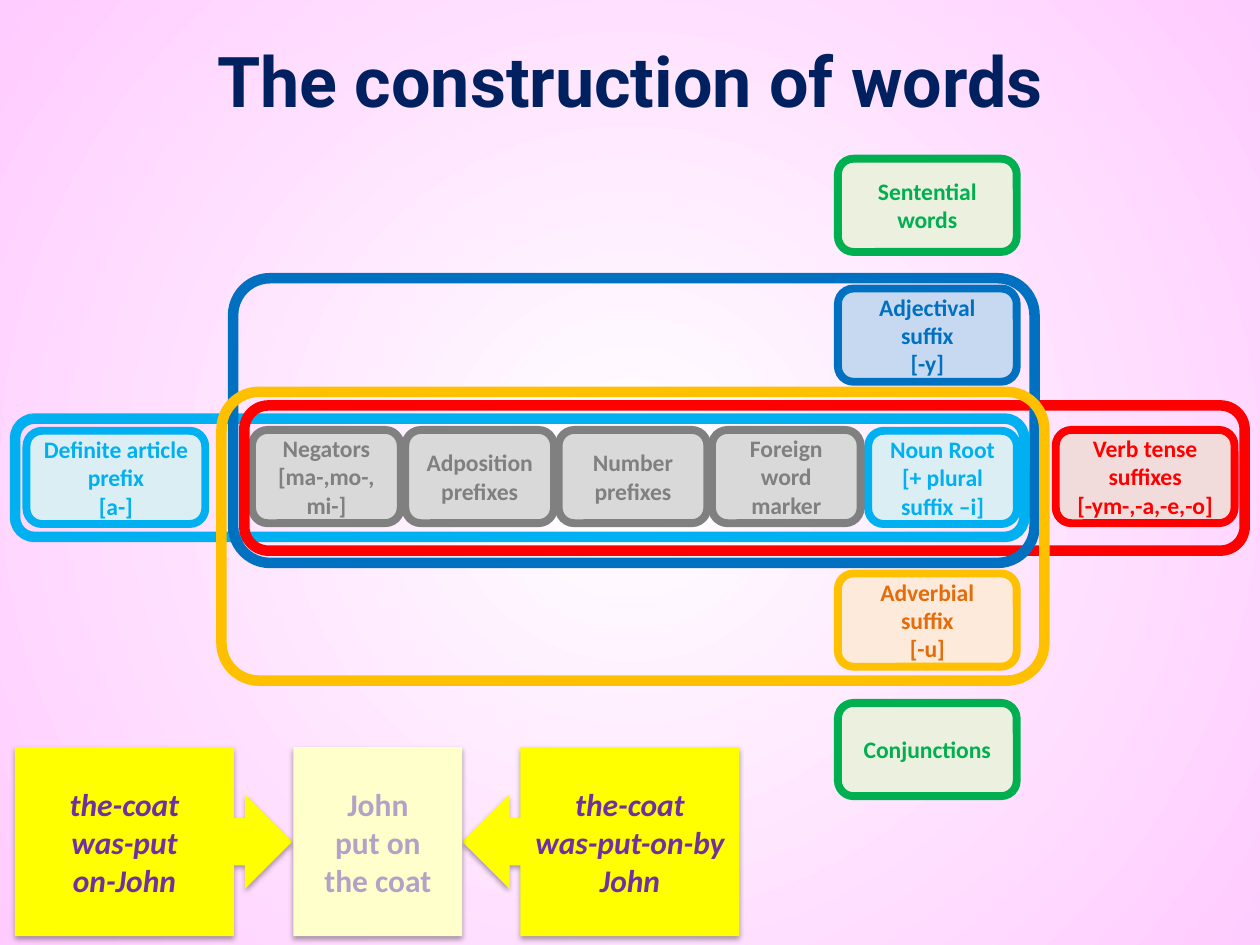
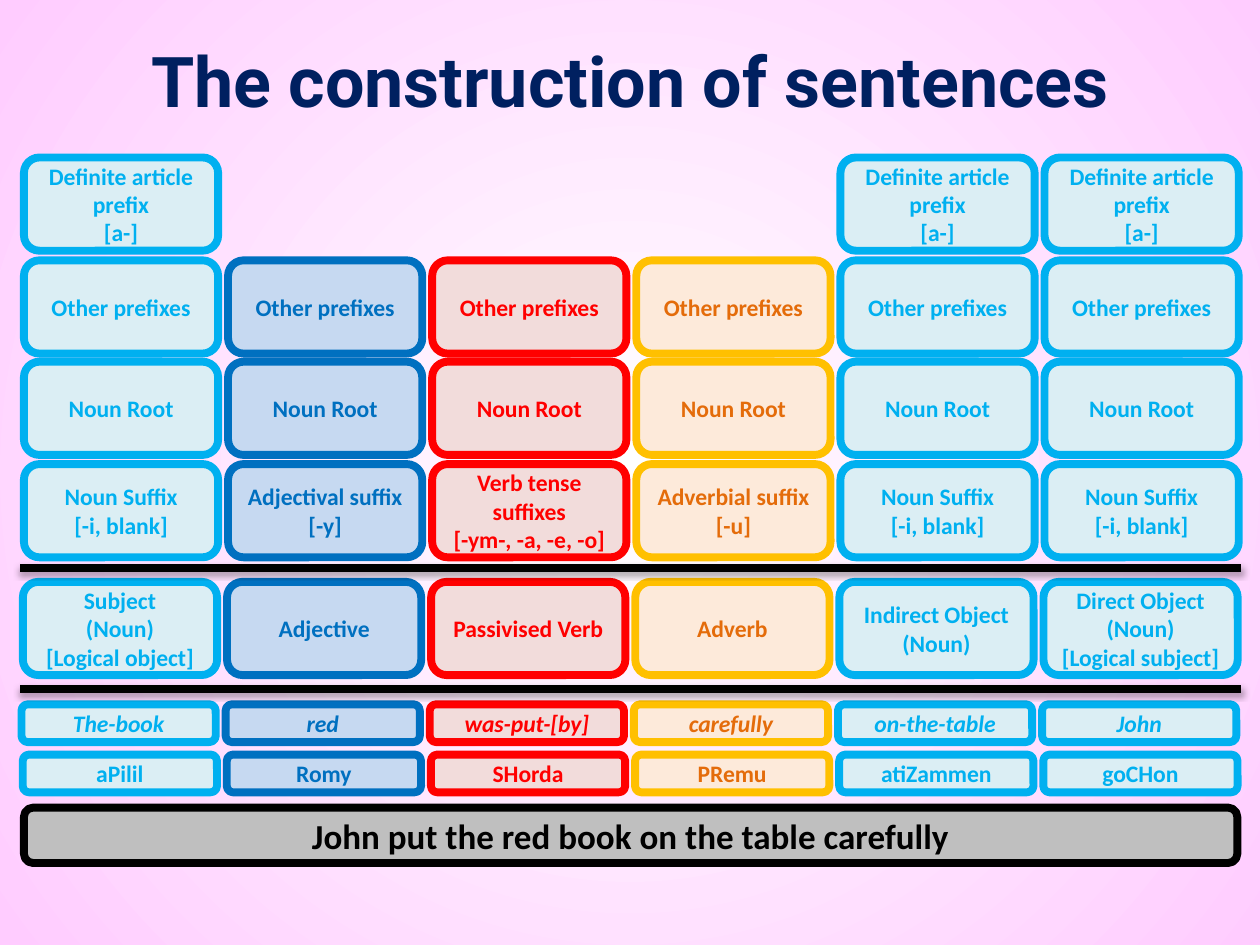
from collections import namedtuple

from lxml.etree import SubElement
from pptx import Presentation
from pptx.dml.color import RGBColor
from pptx.enum.shapes import MSO_CONNECTOR, MSO_SHAPE
from pptx.enum.text import MSO_ANCHOR, PP_ALIGN
from pptx.oxml.ns import qn
from pptx.util import Pt

WHITE = RGBColor(0xFF, 0xFF, 0xFF)
BLACK = RGBColor(0x00, 0x00, 0x00)
PINK = RGBColor(0xFF, 0xCC, 0xFF)
NAVY = RGBColor(0x00, 0x20, 0x60)
SKY = RGBColor(0x00, 0xB0, 0xF0)
BLUE = RGBColor(0x00, 0x70, 0xC0)
RED = RGBColor(0xFF, 0x00, 0x00)
AMBER = RGBColor(0xFF, 0xC0, 0x00)
ORANGE = RGBColor(0xE4, 0x6C, 0x0A)
GREEN = RGBColor(0x00, 0xB0, 0x50)
GREY = RGBColor(0x80, 0x80, 0x80)
YELLOW = RGBColor(0xFF, 0xFF, 0x00)
CREAM = RGBColor(0xFF, 0xFF, 0xCC)
PURPLE = RGBColor(0x70, 0x30, 0xA0)
LILAC = RGBColor(0xB3, 0xA2, 0xC7)

Style = namedtuple("Style", "fill line text")
NOUN = Style(RGBColor(0xDB, 0xEE, 0xF4), SKY, SKY)
ADJECTIVE = Style(RGBColor(0xC6, 0xD9, 0xF1), BLUE, BLUE)
VERB = Style(RGBColor(0xF2, 0xDC, 0xDB), RED, RED)
ADVERB = Style(RGBColor(0xFD, 0xEA, 0xDA), AMBER, ORANGE)
PREFIX = Style(RGBColor(0xD9, 0xD9, 0xD9), GREY, GREY)
OTHER = Style(RGBColor(0xEB, 0xF1, 0xDE), GREEN, GREEN)
SENTENCE = Style(RGBColor(0xBF, 0xBF, 0xBF), BLACK, BLACK)

WORD_HEIGHT = 53.3
BORDER = 4.5


def paint_background(master):
    """Radial white-to-pink gradient, inherited by every slide."""
    fill = master.background.fill
    fill.gradient()
    for stop, color in zip(fill.gradient_stops, (WHITE, PINK)):
        stop.color.rgb = color
    gradient = master.element.find(".//" + qn("a:gradFill"))
    for linear in gradient.findall(qn("a:lin")):
        gradient.remove(linear)
    radial = SubElement(gradient, qn("a:path"), path="circle")
    SubElement(radial, qn("a:fillToRect"), l="50000", t="50000", r="50000", b="50000")


def set_effects(part, shadow=False):
    """Replace the theme's effects; call once fill and line are set."""
    effects = SubElement(part.element.spPr, qn("a:effectLst"))
    if shadow:
        outer = SubElement(effects, qn("a:outerShdw"), blurRad="40000", dist="23000",
                           dir="5400000", rotWithShape="0")
        black = SubElement(outer, qn("a:srgbClr"), val=str(BLACK))
        SubElement(black, qn("a:alpha"), val="35000")


def write(part, text, size, color, font="Calibri", italic=False):
    """Centre the text, one paragraph for each line."""
    frame = part.text_frame
    frame.word_wrap = True
    frame.vertical_anchor = MSO_ANCHOR.MIDDLE
    for index, line in enumerate(text.split("\n")):
        paragraph = frame.add_paragraph() if index else frame.paragraphs[0]
        paragraph.alignment = PP_ALIGN.CENTER
        run = paragraph.add_run()
        run.text = line
        run.font.name = font
        run.font.size = Pt(size)
        run.font.bold = True
        run.font.italic = italic
        run.font.color.rgb = color


def add_block(slide, preset, box, fill=None, line=None, line_width=BORDER, shadow=False):
    block = slide.shapes.add_shape(preset, *map(Pt, box))
    if fill is None:
        block.fill.background()
    else:
        block.fill.solid()
        block.fill.fore_color.rgb = fill
    if line is None:
        block.line.fill.background()
    else:
        block.line.color.rgb = line
        block.line.width = Pt(line_width)
    set_effects(block, shadow)
    return block


def add_word(slide, box, text, style, size=13.5, italic=False):
    word = add_block(slide, MSO_SHAPE.ROUNDED_RECTANGLE, box, style.fill, style.line)
    write(word, text, size, style.text, italic=italic)


def add_frame(slide, box, color, corner=None):
    frame = add_block(slide, MSO_SHAPE.ROUNDED_RECTANGLE, box, line=color, line_width=6)
    if corner:
        frame.adjustments[0] = corner


def add_titled_slide(prs, title):
    slide = prs.slides.add_slide(prs.slide_layouts[6])
    heading = slide.shapes.add_textbox(Pt(0), Pt(0.7), Pt(720), Pt(90))
    write(heading, title, 40, NAVY, font="Roboto")
    return slide


def add_word_diagram(slide, left, top):
    suffix_left, middle = left + 470.2, top + 155
    width = 102.2
    noun_width = 85
    add_word(slide, (left + 487.5, middle + 0.5, noun_width, WORD_HEIGHT),
             "Noun Root\n[+ plural suffix –i]", NOUN)
    add_word(slide, (left + 6.5, middle + 0.5, width, WORD_HEIGHT),
             "Definite article prefix\n[a-]", NOUN)
    add_word(slide, (left + 594.7, middle, width, WORD_HEIGHT),
             "Verb tense suffixes\n[-ym-,-a,-e,-o]", VERB)
    for offset, text, style in (
        (0, "Sentential words", OTHER),
        (74.2, "Adjectival suffix\n[-y]", ADJECTIVE),
        (237, "Adverbial suffix\n[-u]", ADVERB),
        (311, "Conjunctions", OTHER),
    ):
        add_word(slide, (suffix_left, top + offset, width, WORD_HEIGHT), text, style)

    def add_prefixes(first, *texts):
        for column, text in enumerate(texts, first):
            add_word(slide, (left + 135.4 + column * 87.6, middle, noun_width, WORD_HEIGHT),
                     text, PREFIX)

    add_prefixes(0, "Negators\n[ma-,mo-, mi-]", "Adposition prefixes")
    add_frame(slide, (left, top + 148.5, 576.7, 67.7), SKY)
    add_frame(slide, (left + 131, top + 141, 571.7, 83), RED)
    add_frame(slide, (left + 124.6, top + 68.3, 458, 162.7), BLUE, 0.13)
    add_frame(slide, (left + 118, top + 133.2, 470.2, 165), AMBER, 0.13)
    add_prefixes(2, "Number prefixes", "Foreign word marker")


def add_example(slide, left, top):
    """Two callouts pointing at the plain sentence between them."""
    height, callout_width, plain_width = 108, 158.4, 96.5
    plain_left = left + callout_width + 0.7
    for preset, callout_left, text in (
        (MSO_SHAPE.LEFT_ARROW_CALLOUT, plain_left + plain_width,
         "the-coat\nwas-put-on-by\nJohn"),
        (MSO_SHAPE.RIGHT_ARROW_CALLOUT, left, "the-coat\nwas-put\non-John"),
    ):
        callout = add_block(slide, preset, (callout_left, top, callout_width, height),
                            YELLOW, shadow=True)
        callout.adjustments[3] = 0.79
        write(callout, text, 18, PURPLE, italic=True)
    plain = add_block(slide, MSO_SHAPE.RECTANGLE, (plain_left, top, plain_width, height),
                      CREAM, shadow=True)
    write(plain, "John\nput on\nthe coat", 18, LILAC)


def add_rule(slide, left, top, width):
    rule = slide.shapes.add_connector(
        MSO_CONNECTOR.STRAIGHT, Pt(left), Pt(top), Pt(left + width), Pt(top))
    rule.line.color.rgb = BLACK
    rule.line.width = Pt(BORDER)
    set_effects(rule, shadow=True)


def add_sentence_grid(slide, left, top):
    styles = (NOUN, ADJECTIVE, VERB, ADVERB, NOUN, NOUN)
    article, noun_suffix = "Definite article prefix\n[a-]", "Noun Suffix\n[-i, blank]"
    gloss_row = ("The-book", "red", "was-put-[by]", "carefully", "on-the-table", "John")
    rows = (
        (0, 0, WORD_HEIGHT, (article, None, None, None, article, article)),
        (0, 58.8, WORD_HEIGHT, ("Other prefixes",) * 6),
        (0, 116.7, WORD_HEIGHT, ("Noun Root",) * 6),
        (0, 175.2, WORD_HEIGHT, (
            noun_suffix, "Adjectival suffix\n[-y]",
            "Verb tense suffixes\n[-ym-, -a, -e, -o]", "Adverbial suffix\n[-u]",
            noun_suffix, noun_suffix)),
        (-0.6, 242.5, WORD_HEIGHT, (
            "Subject\n(Noun)\n[Logical object]", "Adjective", "Passivised Verb", "Adverb",
            "Indirect Object\n(Noun)", "Direct Object\n(Noun)\n[Logical subject]")),
        (-1.4, 312.5, 21.6, gloss_row),
        (-0.7, 341.2, 21.6, ("aPilil", "Romy", "SHorda", "PRemu", "atiZammen", "goCHon")),
    )
    for shift, offset, height, texts in rows:
        for column, (text, style) in enumerate(zip(texts, styles)):
            if text:
                box = (left + shift + column * 116.64, top + offset, 111, height)
                add_word(slide, box, text, style, italic=texts is gloss_row)
    for offset in (234.7, 303.8):
        add_rule(slide, left - 2.2, top + offset, 697.7)
    add_word(slide, (left, top + 371.5, 693.4, 31.7),
             "John put the red book on the table carefully", SENTENCE, size=20)


def main():
    prs = Presentation()
    prs.slide_width, prs.slide_height = Pt(720), Pt(540)
    paint_background(prs.slide_master)

    words = add_titled_slide(prs, "The construction of words")
    add_word_diagram(words, 8.6, 90.7)
    add_example(words, 8.6, 427)

    sentences = add_titled_slide(prs, "The construction of sentences")
    add_sentence_grid(sentences, 13.7, 90)

    prs.save("out.pptx")


if __name__ == "__main__":
    main()
